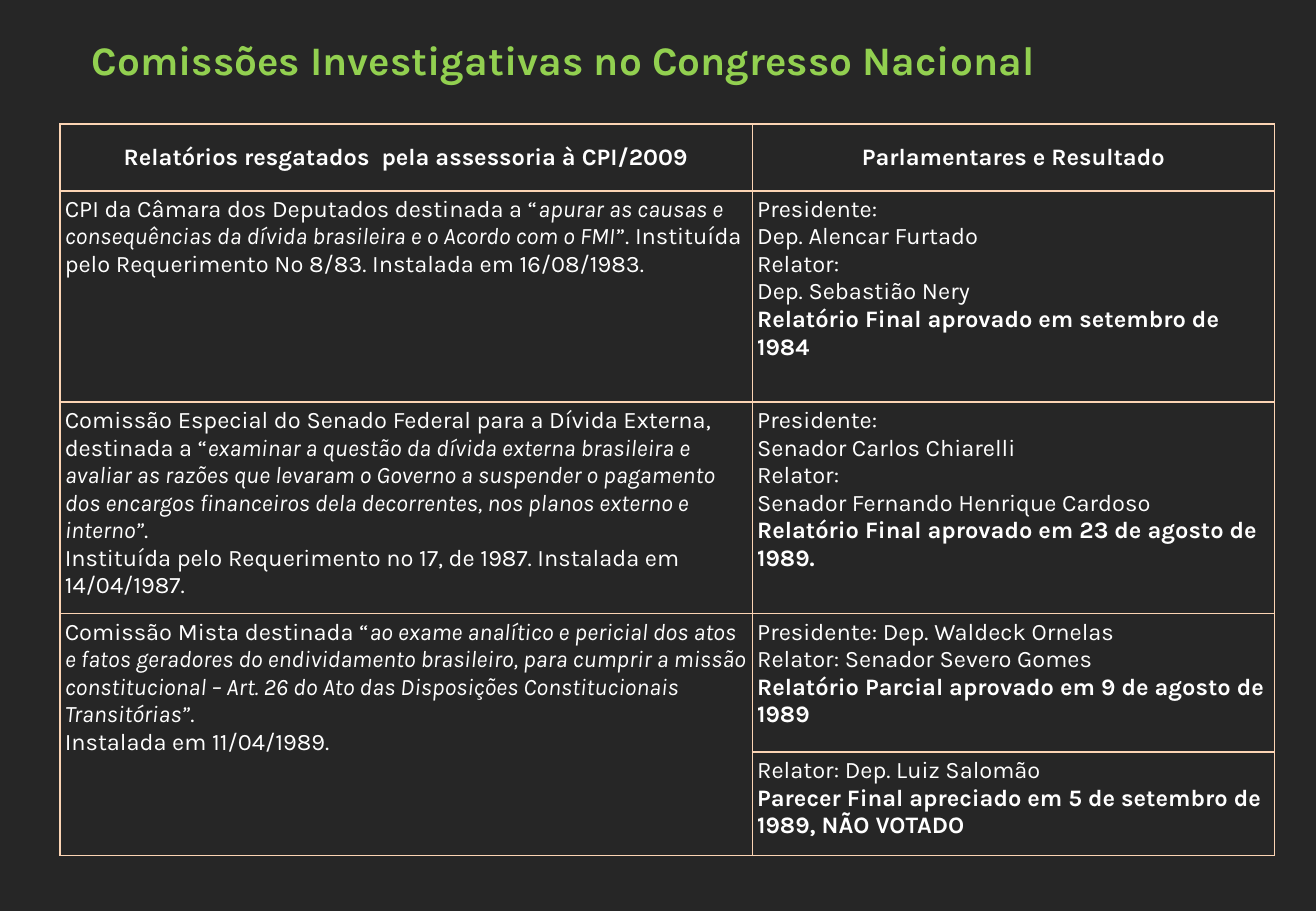
"""Build the slide on investigative commissions in the National Congress."""
from dataclasses import dataclass

from lxml import etree
from pptx import Presentation
from pptx.dml.color import RGBColor
from pptx.enum import text
from pptx.oxml import ns
from pptx.util import Pt

COLOURS = {"ground": "262626", "title": "92D050", "body": "FFFFFF", "border": "FBD4B4"}
FONT = "Karla"
COLUMN_WIDTHS = (410.4, 309.6)
ROW_HEIGHTS = (39.6, 125.3, 125.3, 82.1, 61.2)
CELL_MARGIN = 2.9


@dataclass(frozen=True)
class Span:
    """A stretch of text with one style."""
    words: str
    bold: bool = False
    italic: bool = False


@dataclass(frozen=True)
class Entry:
    """The paragraphs of one table cell."""
    row: int
    column: int
    paragraphs: tuple[tuple[Span, ...], ...]


def heading(column: int, words: str) -> Entry:
    """Describe a header cell."""
    return Entry(0, column, ((Span(words, bold=True),),))


def commission(row: int, opening: str, quote: str, closing: str, *notes: str) -> Entry:
    """Describe a commission whose purpose is quoted in italics."""
    purpose = (Span(opening), Span(quote, italic=True), Span(closing))
    return Entry(row, 0, (purpose, *((Span(note),) for note in notes)))


def outcome(row: int, people: tuple[str, ...], result: str) -> Entry:
    """Describe the members and the result in bold."""
    return Entry(row, 1, (*((Span(person),) for person in people), (Span(result, bold=True),)))


ENTRIES = (
    heading(0, "Relatórios resgatados  pela assessoria à CPI/2009"),
    heading(1, "Parlamentares e Resultado"),
    commission(
        1, "CPI da Câmara dos Deputados destinada a “",
        "apurar as causas e consequências da dívida brasileira e o Acordo com o FMI",
        "”. Instituída pelo Requerimento Nº 8/83. Instalada em 16/08/1983."),
    outcome(
        1, ("Presidente:", "Dep. Alencar Furtado", "Relator:", "Dep. Sebastião Nery"),
        "Relatório Final aprovado em setembro de 1984"),
    commission(
        2, "Comissão Especial do Senado Federal para a Dívida Externa, destinada a “",
        "examinar a questão da dívida externa brasileira e avaliar as razões que levaram "
        "o Governo a suspender o pagamento dos encargos financeiros dela decorrentes, "
        "nos planos externo e interno”", ".",
        "Instituída pelo Requerimento nº 17, de 1987. Instalada em 14/04/1987."),
    outcome(
        2, ("Presidente:", "Senador Carlos Chiarelli", "Relator:",
            "Senador Fernando Henrique Cardoso"),
        "Relatório Final aprovado em 23 de agosto de 1989."),
    commission(
        3, "Comissão Mista destinada “",
        "ao exame analítico e pericial dos atos e fatos geradores do endividamento "
        "brasileiro, para cumprir a missão constitucional – Art. 26 do Ato das "
        "Disposições Constitucionais Transitórias”", ".",
        "Instalada em 11/04/1989."),
    outcome(
        3, ("Presidente: Dep. Waldeck Ornelas", "Relator: Senador Severo Gomes"),
        "Relatório Parcial aprovado em 9 de agosto de 1989"),
    outcome(
        4, ("Relator: Dep. Luiz Salomão",),
        "Parecer Final apreciado em 5 de setembro de 1989, NÃO VOTADO"),
)


def style_font(font, size: float, colour: str, bold: bool, italic: bool = False) -> None:
    """Set the typeface, size, colour and weight of a font."""
    font.name, font.size, font.bold, font.italic = FONT, Pt(size), bold, italic
    font.color.rgb = RGBColor.from_string(COLOURS[colour])


def draw_title(page, words: str) -> None:
    """Place and format the title placeholder."""
    box = page.shapes.title
    box.left, box.top, box.width, box.height = Pt(41), Pt(16.6), Pt(708.5), Pt(36.7)
    frame = box.text_frame
    frame.text = words
    frame.auto_size = text.MSO_AUTO_SIZE.NONE
    frame.vertical_anchor = text.MSO_ANCHOR.MIDDLE
    frame.margin_left = Pt(13.2)
    para = frame.paragraphs[0]
    para.alignment = text.PP_ALIGN.LEFT
    style_font(para.runs[0].font, 24, "title", True)


def format_cell(cell) -> None:
    """Set the fill, margins and four borders of a cell."""
    cell.fill.solid()
    cell.fill.fore_color.rgb = RGBColor.from_string(COLOURS["ground"])
    cell.margin_left = cell.margin_right = Pt(CELL_MARGIN)
    cell.margin_top = cell.margin_bottom = Pt(CELL_MARGIN)
    properties = cell._tc.get_or_add_tcPr()
    for index, side in enumerate(("a:lnL", "a:lnR", "a:lnT", "a:lnB")):
        line = etree.Element(ns.qn(side), w=str(Pt(1)))
        fill = etree.SubElement(line, ns.qn("a:solidFill"))
        etree.SubElement(fill, ns.qn("a:srgbClr"), val=COLOURS["border"])
        properties.insert(index, line)


def write_entry(cell, entry: Entry) -> None:
    """Write the styled paragraphs of an entry into its cell."""
    frame = cell.text_frame
    frame.text = "\n" * (len(entry.paragraphs) - 1)
    is_heading = entry.row == 0
    cell.vertical_anchor = text.MSO_ANCHOR.MIDDLE if is_heading else text.MSO_ANCHOR.TOP
    for para, spans in zip(frame.paragraphs, entry.paragraphs):
        para.alignment = text.PP_ALIGN.CENTER if is_heading else text.PP_ALIGN.LEFT
        for span in spans:
            run = para.add_run()
            run.text = span.words
            style_font(run.font, 14, "body", span.bold, span.italic)


def draw_table(page) -> None:
    """Draw the table of commissions and results."""
    table = page.shapes.add_table(
        len(ROW_HEIGHTS), len(COLUMN_WIDTHS), Pt(35.5), Pt(73.5),
        Pt(sum(COLUMN_WIDTHS)), Pt(sum(ROW_HEIGHTS))).table
    table.first_row = table.horz_banding = False
    for column, width in zip(table.columns, COLUMN_WIDTHS):
        column.width = Pt(width)
    for row, height in zip(table.rows, ROW_HEIGHTS):
        row.height = Pt(height)
    for cell in table.iter_cells():
        format_cell(cell)
    table.cell(3, 0).merge(table.cell(4, 0))
    for entry in ENTRIES:
        write_entry(table.cell(entry.row, entry.column), entry)


def main() -> None:
    """Build and save the deck."""
    deck = Presentation()
    deck.slide_width, deck.slide_height = Pt(780), Pt(540)
    page = deck.slides.add_slide(deck.slide_layouts.get_by_name("Title Only"))
    page.background.fill.solid()
    page.background.fill.fore_color.rgb = RGBColor.from_string(COLOURS["ground"])
    draw_title(page, "Comissões Investigativas no Congresso Nacional")
    draw_table(page)
    deck.save("out.pptx")


if __name__ == "__main__":
    main()
